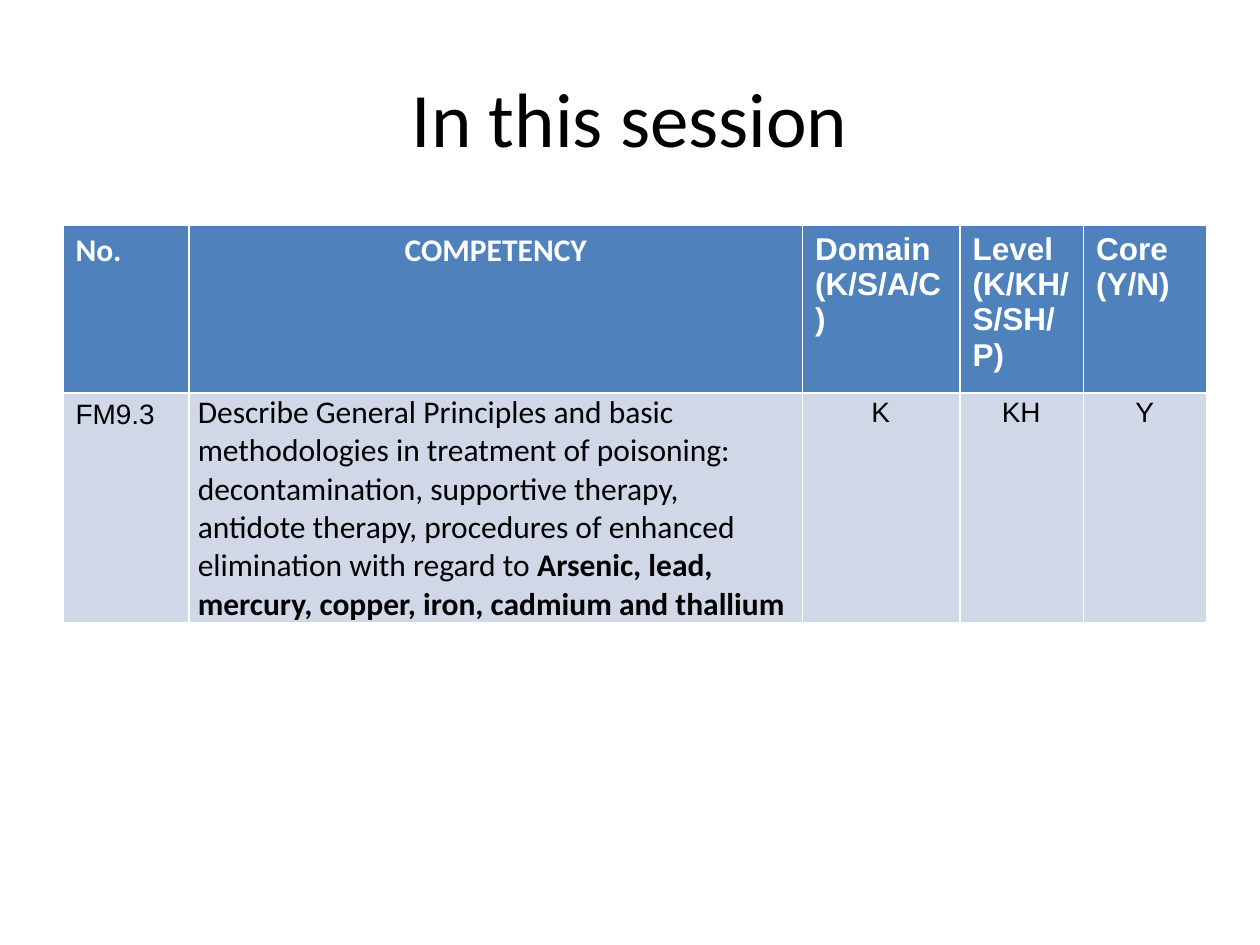
from dataclasses import dataclass

from lxml.etree import SubElement
from pptx import Presentation
from pptx.dml.color import RGBColor
from pptx.enum.text import MSO_ANCHOR, PP_ALIGN
from pptx.oxml.ns import qn
from pptx.util import Inches, Pt


@dataclass(frozen=True)
class Theme:
    heading_font: str = "Calibri"
    label_font: str = "Arial"
    ink: str = "000000"
    paper: str = "FFFFFF"
    header_fill: str = "4F81BD"
    body_fill: str = "D0D8E8"
    title_size: int = 44
    text_size: int = 18
    label_size: int = 16
    border: int = 1


THEME = Theme()
COLUMN_WIDTHS = (1, 4.87, 1.25, 0.98, 0.98)
ROW_HEIGHTS = (1.33, 1.82)
HEADERS = (
    ("No.", THEME.heading_font, PP_ALIGN.LEFT),
    ("COMPETENCY", THEME.heading_font, PP_ALIGN.CENTER),
    ("Domain (K/S/A/C)", THEME.label_font, PP_ALIGN.LEFT),
    ("Level (K/KH/S/SH/P)", THEME.label_font, PP_ALIGN.LEFT),
    ("Core (Y/N)", THEME.label_font, PP_ALIGN.LEFT),
)
COMPETENCY = (
    "Describe General Principles and basic methodologies in treatment of "
    "poisoning: decontamination, supportive therapy, antidote therapy, "
    "procedures of enhanced elimination with regard to "
)
POISONS = "Arsenic, lead, mercury, copper, iron, cadmium and thallium"
RATINGS = ("K", "KH", "Y")


def style_run(run, font, size, color, bold=False):
    run.font.name = font
    run.font.size = Pt(size)
    run.font.color.rgb = RGBColor.from_string(color)
    run.font.bold = bold


def add_title(slide, text):
    title = slide.shapes.add_textbox(Inches(0.5), Inches(0.3), Inches(9), Inches(1.25))
    frame = title.text_frame
    frame.word_wrap = True
    frame.vertical_anchor = MSO_ANCHOR.MIDDLE
    frame.text = text
    heading = frame.paragraphs[0]
    heading.alignment = PP_ALIGN.CENTER
    style_run(heading.runs[0], THEME.heading_font, THEME.title_size, THEME.ink)


def add_borders(cell):
    properties = cell._tc.get_or_add_tcPr()
    for side in "LRTB":
        line = SubElement(properties, qn(f"a:ln{side}"), w=str(Pt(THEME.border)))
        fill = SubElement(line, qn("a:solidFill"))
        SubElement(fill, qn("a:srgbClr"), val=THEME.paper)


def fill_cell(cell, text, font, size, color, fill, align=PP_ALIGN.LEFT, bold=False):
    add_borders(cell)
    cell.fill.solid()
    cell.fill.fore_color.rgb = RGBColor.from_string(fill)
    cell.text_frame.text = text
    paragraph = cell.text_frame.paragraphs[0]
    paragraph.alignment = align
    style_run(paragraph.runs[0], font, size, color, bold)
    return paragraph


def tighten(cell):
    cell.margin_left = Inches(0.07)
    cell.margin_right = Inches(0.08)
    cell.margin_top = cell.margin_bottom = 0


def add_competency_table(slide):
    table = slide.shapes.add_table(
        len(ROW_HEIGHTS), len(COLUMN_WIDTHS), Inches(0.5), Inches(1.79),
        Inches(sum(COLUMN_WIDTHS)), Inches(sum(ROW_HEIGHTS))).table
    table.horz_banding = False
    for column, width in zip(table.columns, COLUMN_WIDTHS):
        column.width = Inches(width)
    for row, height in zip(table.rows, ROW_HEIGHTS):
        row.height = Inches(height)

    # Header row
    for index, (text, font, align) in enumerate(HEADERS):
        fill_cell(table.cell(0, index), text, font, THEME.text_size, THEME.paper,
                  THEME.header_fill, align, bold=True)

    # Competency number and description
    fill_cell(table.cell(1, 0), "FM9.3", THEME.label_font, THEME.label_size,
              THEME.ink, THEME.body_fill)
    description = table.cell(1, 1)
    tighten(description)
    sentence = fill_cell(description, COMPETENCY, THEME.heading_font,
                         THEME.text_size, THEME.ink, THEME.body_fill)
    poisons = sentence.add_run()
    poisons.text = POISONS
    style_run(poisons, THEME.heading_font, THEME.text_size, THEME.ink, bold=True)

    # Domain, level and core ratings
    for index, rating in enumerate(RATINGS, start=2):
        cell = table.cell(1, index)
        tighten(cell)
        paragraph = fill_cell(cell, rating, THEME.label_font, THEME.label_size,
                              THEME.ink, THEME.body_fill, PP_ALIGN.CENTER)
        paragraph.line_spacing = 1.15


def main():
    presentation = Presentation()
    presentation.slide_width = Inches(10)
    presentation.slide_height = Inches(7.5)
    slide = presentation.slides.add_slide(presentation.slide_layouts[6])
    add_title(slide, "In this session")
    add_competency_table(slide)
    presentation.save("out.pptx")


if __name__ == "__main__":
    main()
